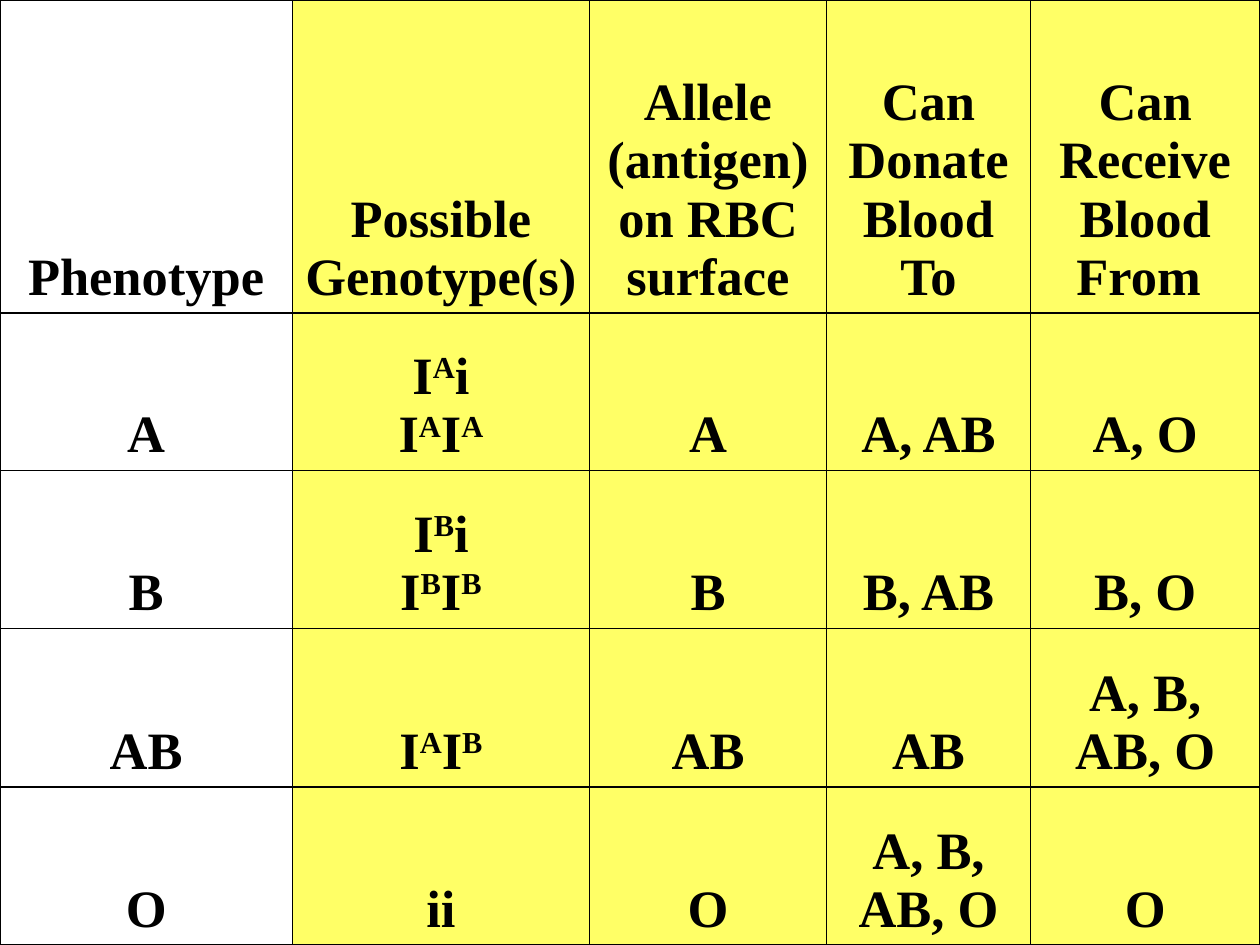
from lxml.etree import SubElement
from pptx import Presentation
from pptx.dml.color import RGBColor as Rgb
from pptx.enum.text import MSO_ANCHOR as Anchor, PP_ALIGN as Align
from pptx.oxml.ns import qn
from pptx.util import Inches, Pt

COLORS = {"ink": "000000", "phenotype": "FFFFFF", "details": "FFFF66"}
FONT_FORMAT = {"name": "Times New Roman", "size": Pt(30), "bold": True}
SLIDE_WIDTH, SLIDE_HEIGHT = Inches(10), Inches(7.5)

# Shares of the table's width and height
COLUMN_SHARES = [2.32, 2.36, 1.88, 1.62, 1.82]
ROW_SHARES = [2.48, 1.25, 1.25, 1.26, 1.25]

# A caret raises the letter after it; a line break starts a paragraph
BLOOD_TYPES = [
    ["Phenotype", "Possible Genotype(s)", "Allele (antigen) on RBC surface",
     "Can Donate Blood To", "Can Receive Blood From "],
    ["A", "I^Ai\nI^AI^A", "A", "A, AB", "A, O"],
    ["B", "I^Bi\nI^BI^B", "B", "B, AB", "B, O"],
    ["AB", "I^AI^B", "AB", "AB", "A, B, AB, O"],
    ["O", "ii", "O", "A, B, AB, O", "O"],
]


def add_run(paragraph, text, raised=False):
    if not text:
        return
    run = paragraph.add_run()
    run.text = text
    for name, value in FONT_FORMAT.items():
        setattr(run.font, name, value)
    run.font.color.rgb = Rgb.from_string(COLORS["ink"])
    if raised:
        run.font._element.set("baseline", "30000")


def write_text(cell, text):
    frame = cell.text_frame
    for index, line in enumerate(text.split("\n")):
        paragraph = frame.add_paragraph() if index else frame.paragraphs[0]
        paragraph.alignment = Align.CENTER
        plain, *raised_parts = line.split("^")
        add_run(paragraph, plain)
        for part in raised_parts:
            add_run(paragraph, part[0], raised=True)
            add_run(paragraph, part[1:])


def add_borders(cell):
    properties = cell._tc.get_or_add_tcPr()
    for index, side in enumerate(("lnL", "lnR", "lnT", "lnB")):
        line = SubElement(properties, qn(f"a:{side}"), w=str(Pt(1)))
        fill = SubElement(line, qn("a:solidFill"))
        SubElement(fill, qn("a:srgbClr"), val=COLORS["ink"])
        properties.insert(index, line)  # borders come before the fill


def add_blood_table(slide, left, top, width, height):
    table = slide.shapes.add_table(
        len(ROW_SHARES), len(COLUMN_SHARES), left, top, width, height).table
    for column, share in zip(table.columns, COLUMN_SHARES):
        column.width = int(width * share / sum(COLUMN_SHARES))
    for row, share in zip(table.rows, ROW_SHARES):
        row.height = int(height * share / sum(ROW_SHARES))

    for row, texts in zip(table.rows, BLOOD_TYPES):
        for index, (cell, text) in enumerate(zip(row.cells, texts)):
            cell.vertical_anchor = Anchor.BOTTOM
            cell.fill.solid()
            color = COLORS["details" if index else "phenotype"]
            cell.fill.fore_color.rgb = Rgb.from_string(color)
            add_borders(cell)
            write_text(cell, text)


def main():
    presentation = Presentation()
    presentation.slide_width = SLIDE_WIDTH
    presentation.slide_height = SLIDE_HEIGHT
    slide = presentation.slides.add_slide(presentation.slide_layouts[6])
    add_blood_table(slide, 0, 0, SLIDE_WIDTH, SLIDE_HEIGHT)
    presentation.save("out.pptx")


if __name__ == "__main__":
    main()
